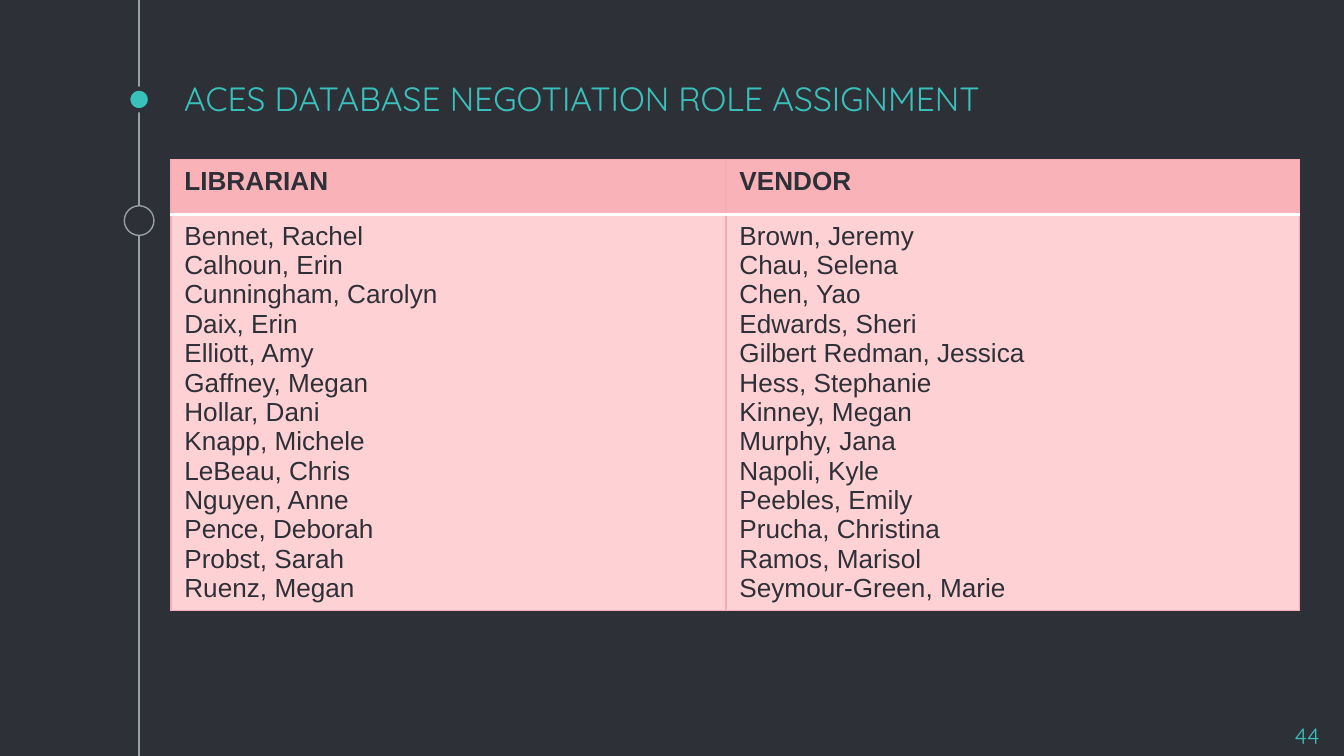
from dataclasses import dataclass

from lxml.etree import SubElement
from pptx import Presentation
from pptx.dml.color import RGBColor
from pptx.enum.shapes import MSO_CONNECTOR, MSO_SHAPE
from pptx.enum.text import MSO_ANCHOR, MSO_AUTO_SIZE, PP_ALIGN
from pptx.oxml import parse_xml
from pptx.oxml.ns import nsdecls, qn
from pptx.slide import Slide
from pptx.table import _Cell
from pptx.text.text import TextFrame
from pptx.util import Cm, Pt


@dataclass(frozen=True)
class Theme:
    dark: str = "2E3037"
    teal: str = "39C0BA"
    grey: str = "999FA9"
    header: str = "FAB2B9"
    body: str = "FED1D4"
    border: str = "F6ACB4"
    white: str = "FFFFFF"
    display: str = "Quicksand"
    text: str = "Arial"
    title_size: float = 18
    table_size: float = 14
    number_size: float = 12
    thin: float = 0.75
    rule: float = 2


@dataclass(frozen=True)
class Dot:
    y: float
    size: float
    fill: str
    line: str
    width: float


@dataclass(frozen=True)
class Role:
    name: str
    width: float
    people: tuple[str, ...]


T = Theme()
AXIS_X = 2.63
HEIGHT = 14.29
INSET = Cm(0.25)
ROWS = (1.04, 7.48)
DOTS = (
    Dot(1.88, 0.41, T.teal, T.dark, 2.25),
    Dot(4.17, 0.56, T.dark, T.grey, T.thin),
)
ROLES = (
    Role("LIBRARIAN", 10.49, (
        "Bennet, Rachel", "Calhoun, Erin", "Cunningham, Carolyn", "Daix, Erin",
        "Elliott, Amy", "Gaffney, Megan", "Hollar, Dani", "Knapp, Michele",
        "LeBeau, Chris", "Nguyen, Anne", "Pence, Deborah", "Probst, Sarah",
        "Ruenz, Megan",
    )),
    Role("VENDOR", 10.84, (
        "Brown, Jeremy", "Chau, Selena", "Chen, Yao", "Edwards, Sheri",
        "Gilbert Redman, Jessica", "Hess, Stephanie", "Kinney, Megan",
        "Murphy, Jana", "Napoli, Kyle", "Peebles, Emily", "Prucha, Christina",
        "Ramos, Marisol", "Seymour-Green, Marie",
    )),
)


def rgb(color: str) -> RGBColor:
    return RGBColor.from_string(color)


def write(tf: TextFrame, *lines: str, font: str = T.display, size: float = T.title_size,
          color: str = T.teal, bold: bool = False,
          align: PP_ALIGN = PP_ALIGN.LEFT) -> None:
    for i, line in enumerate(lines):
        p = tf.add_paragraph() if i else tf.paragraphs[0]
        p.alignment = align
        r = p.add_run()
        r.text = line
        r.font.name, r.font.size, r.font.bold = font, Pt(size), bold
        r.font.color.rgb = rgb(color)


def frame(tf: TextFrame, anchor: MSO_ANCHOR) -> None:
    tf.word_wrap = True
    tf.auto_size = MSO_AUTO_SIZE.NONE
    tf.vertical_anchor = anchor
    tf.margin_left = tf.margin_right = tf.margin_top = tf.margin_bottom = INSET


def add_axis(s: Slide) -> None:
    line = s.shapes.add_connector(MSO_CONNECTOR.STRAIGHT, Cm(AXIS_X), 0, Cm(AXIS_X), Cm(HEIGHT))
    line.line.color.rgb = rgb(T.grey)
    line.line.width = Pt(T.thin)
    SubElement(line._element.spPr, qn("a:effectLst"))


def add_dot(s: Slide, dot: Dot) -> None:
    half = dot.size / 2
    sp = s.shapes.add_shape(MSO_SHAPE.OVAL, Cm(AXIS_X - half), Cm(dot.y - half),
                            Cm(dot.size), Cm(dot.size))
    sp.shadow.inherit = False
    sp.fill.solid()
    sp.fill.fore_color.rgb = rgb(dot.fill)
    sp.line.color.rgb = rgb(dot.line)
    sp.line.width = Pt(dot.width)


def style_cell(cell: _Cell, fill: str, **edges: tuple[str, float]) -> None:
    cell.fill.solid()
    cell.fill.fore_color.rgb = rgb(fill)
    tcPr = cell._tc.get_or_add_tcPr()
    for i, side in enumerate("LRTB"):
        color, width = edges.get(side, (T.border, T.thin))
        tcPr.insert(i, parse_xml(
            f'<a:ln{side} {nsdecls("a")} w="{Pt(width)}"><a:solidFill>'
            f'<a:srgbClr val="{color}"/></a:solidFill></a:ln{side}>'))


def add_roles(s: Slide) -> None:
    width = sum(role.width for role in ROLES)
    table = s.shapes.add_table(len(ROWS), len(ROLES), Cm(3.23), Cm(3.02),
                               Cm(width), Cm(sum(ROWS))).table
    for row, height in zip(table.rows, ROWS):
        row.height = Cm(height)
    rule = (T.white, T.rule)
    for i, role in enumerate(ROLES):
        table.columns[i].width = Cm(role.width)
        head, body = table.cell(0, i), table.cell(1, i)
        style_cell(head, T.header, B=rule)
        style_cell(body, T.body, T=rule)
        write(head.text_frame, role.name, font=T.text, size=T.table_size, color=T.dark, bold=True)
        write(body.text_frame, *role.people, font=T.text, size=T.table_size, color=T.dark)


def main() -> None:
    prs = Presentation()
    prs.slide_width, prs.slide_height = Cm(25.4), Cm(HEIGHT)
    s = prs.slides.add_slide(prs.slide_layouts[5])
    s.background.fill.solid()
    s.background.fill.fore_color.rgb = rgb(T.dark)

    add_axis(s)
    for dot in DOTS:
        add_dot(s, dot)

    title = s.shapes.title
    title.left, title.top, title.width, title.height = Cm(3.23), Cm(1.52), Cm(19.05), Cm(0.97)
    frame(title.text_frame, MSO_ANCHOR.BOTTOM)
    write(title.text_frame, "ACES DATABASE NEGOTIATION ROLE ASSIGNMENT")

    number = s.shapes.add_textbox(Cm(23.67), Cm(13.41), Cm(1.52), Cm(0.86))
    frame(number.text_frame, MSO_ANCHOR.TOP)
    write(number.text_frame, "44", size=T.number_size, align=PP_ALIGN.RIGHT)

    add_roles(s)
    prs.save("out.pptx")


if __name__ == "__main__":
    main()
